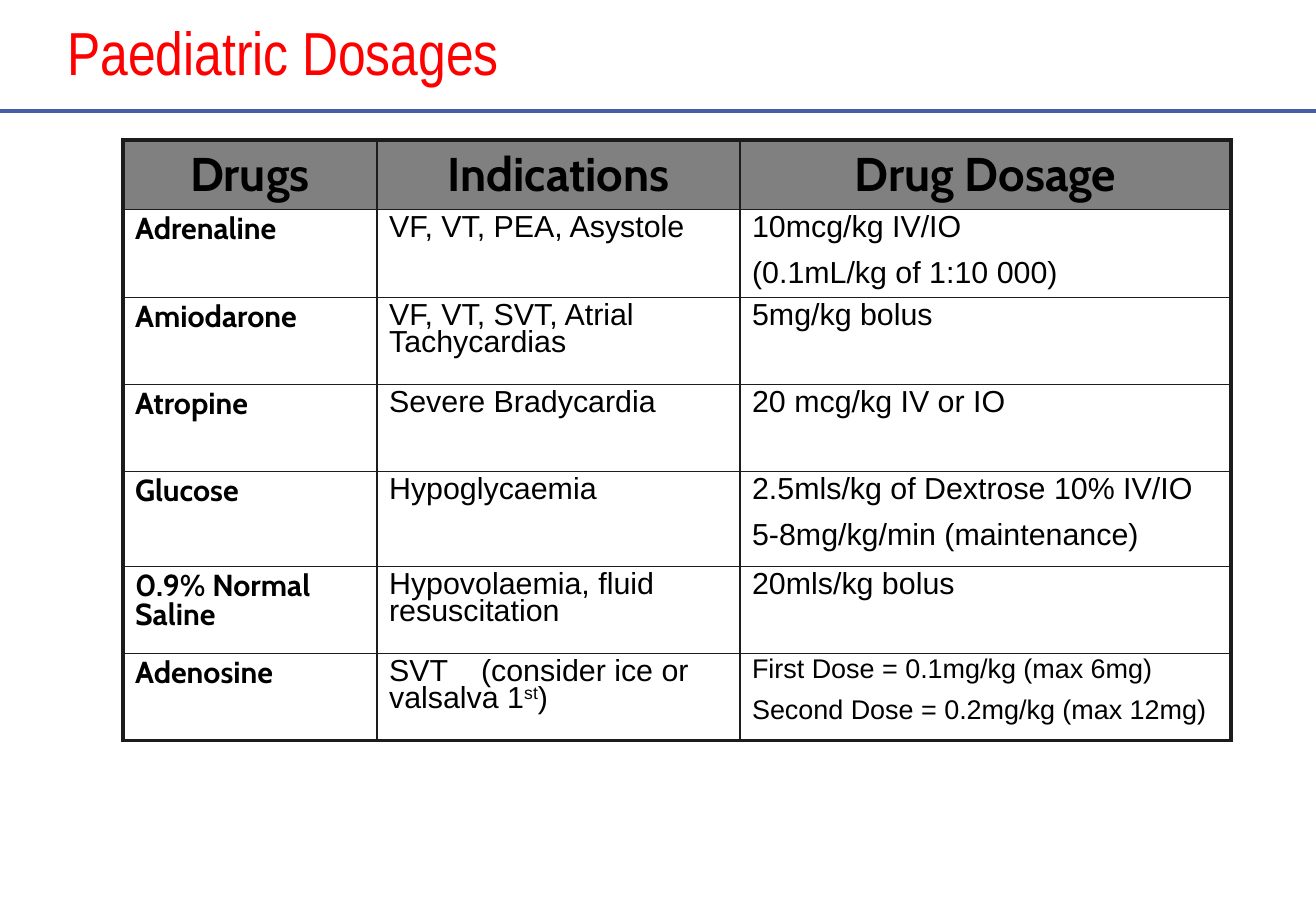
from pptx import Presentation
from pptx.dml.color import RGBColor
from pptx.enum.shapes import MSO_CONNECTOR
from pptx.enum.text import MSO_ANCHOR, PP_ALIGN
from pptx.oxml.ns import qn
from pptx.util import Pt
from lxml.etree import SubElement

SCALE = 7526
WIDTH, HEIGHT = 1316, 911
BORDER = "1C1C1C"
COLUMNS = [254, 363, 491]
ROWS = [69, 88, 87, 87, 95, 87, 87]
HEADERS = ["Drugs", "Indications", "Drug Dosage"]
DRUGS = [
    ("Adrenaline", "VF, VT, PEA, Asystole", "10mcg/kg IV/IO\n(0.1mL/kg of 1:10 000)"),
    ("Amiodarone", "VF, VT, SVT, Atrial Tachycardias", "5mg/kg bolus"),
    ("Atropine", "Severe Bradycardia", "20 mcg/kg IV or IO"),
    ("Glucose", "Hypoglycaemia",
     "2.5mls/kg of Dextrose 10% IV/IO\n5-8mg/kg/min (maintenance)"),
    ("0.9% Normal Saline", "Hypovolaemia, fluid resuscitation", "20mls/kg bolus"),
    ("Adenosine", "SVT\t(consider ice or valsalva 1^st^)",
     "First Dose = 0.1mg/kg (max 6mg)\nSecond Dose = 0.2mg/kg (max 12mg)"),
]


def px(n):
    """Turn px into EMU."""
    return n * SCALE


def color(value):
    """Turn a hex string into a colour."""
    return RGBColor.from_string(value)


def style(p, name, size, bold=False, fill="000000"):
    """Set the font of a paragraph."""
    p.font.name, p.font.size, p.font.bold = name, Pt(size), bold
    p.font.color.rgb = color(fill)


def add_title(s, x, y, w, h):
    """Place the title placeholder in its box."""
    sp = s.shapes.title
    sp.left, sp.top, sp.width, sp.height = map(px, (x, y, w, h))
    tf = sp.text_frame
    tf.text = "Paediatric Dosages"
    tf.vertical_anchor = MSO_ANCHOR.BOTTOM
    tf.paragraphs[0].alignment = PP_ALIGN.LEFT
    style(tf.paragraphs[0], "Arial Narrow", 36, fill="FF0000")


def add_rule(s, x, y, w):
    """Draw the line under the title."""
    line = s.shapes.add_connector(MSO_CONNECTOR.STRAIGHT, px(x), px(y), px(x + w), px(y))
    line.line.color.rgb = color("485CA8")
    line.line.width = Pt(2.5)
    SubElement(line._element.spPr, qn("a:effectLst"))


def set_borders(cell, row, col):
    """Draw thick borders on the table's edge and thin ones inside."""
    edges = {"L": col == 0, "R": col == len(COLUMNS) - 1,
             "T": row == 0, "B": row == len(ROWS) - 1}
    tcPr = cell._tc.get_or_add_tcPr()
    for side, outer in edges.items():
        ln = SubElement(tcPr, qn(f"a:ln{side}"), w=str(Pt(2.25 if outer else 1)))
        SubElement(SubElement(ln, qn("a:solidFill")), qn("a:srgbClr"), val=BORDER)


def add_tab(p, pos):
    """Add a left tab stop to a paragraph."""
    tabs = SubElement(p._p.get_or_add_pPr(), qn("a:tabLst"))
    SubElement(tabs, qn("a:tab"), pos=str(px(pos)), algn="l")


def fill_header(cell, text):
    """Write a grey header cell."""
    cell.fill.solid()
    cell.fill.fore_color.rgb = color("808080")
    p = cell.text_frame.paragraphs[0]
    p.text = text
    p.alignment = PP_ALIGN.CENTER
    style(p, "Cabin", 28, True)


def fill_body(cell, text, name, size, bold):
    """Write a body cell, with text between carets as superscript."""
    cell.fill.background()
    tf = cell.text_frame
    for i, line in enumerate(text.split("\n")):
        p = tf.add_paragraph() if i else tf.paragraphs[0]
        p.line_spacing = 0.8
        if i:
            p.space_before = Pt(round(size * 0.63))
        if "\t" in line:
            add_tab(p, 92)
        for j, part in enumerate(line.split("^")):
            r = p.add_run()
            r.text = part
            if j % 2:
                r._r.get_or_add_rPr().set("baseline", "30000")
        style(p, name, size, bold)


def add_dosage_table(s, x, y):
    """Build the dosage table from its top left corner."""
    frame = s.shapes.add_table(len(ROWS), len(COLUMNS), px(x), px(y),
                               px(sum(COLUMNS)), px(sum(ROWS)))
    table = frame.table
    table.first_row = table.horz_banding = False
    for column, w in zip(table.columns, COLUMNS):
        column.width = px(w)
    for row, h in zip(table.rows, ROWS):
        row.height = px(h)
    for i, texts in enumerate([HEADERS, *DRUGS]):
        for j, text in enumerate(texts):
            cell = table.cell(i, j)
            set_borders(cell, i, j)
            if i == 0:
                fill_header(cell, text)
            else:
                size = 16 if text.startswith("First Dose") else 18
                fill_body(cell, text, "Arial" if j else "Cabin", size, j == 0)


def main():
    """Build and save the slide."""
    prs = Presentation()
    prs.slide_width, prs.slide_height = px(WIDTH), px(HEIGHT)
    s = prs.slides.add_slide(prs.slide_layouts[5])
    add_rule(s, 0, 111, WIDTH)
    add_title(s, 55, 16, 1108, 78)
    add_dosage_table(s, 123, 140)
    prs.save("out.pptx")


if __name__ == "__main__":
    main()
